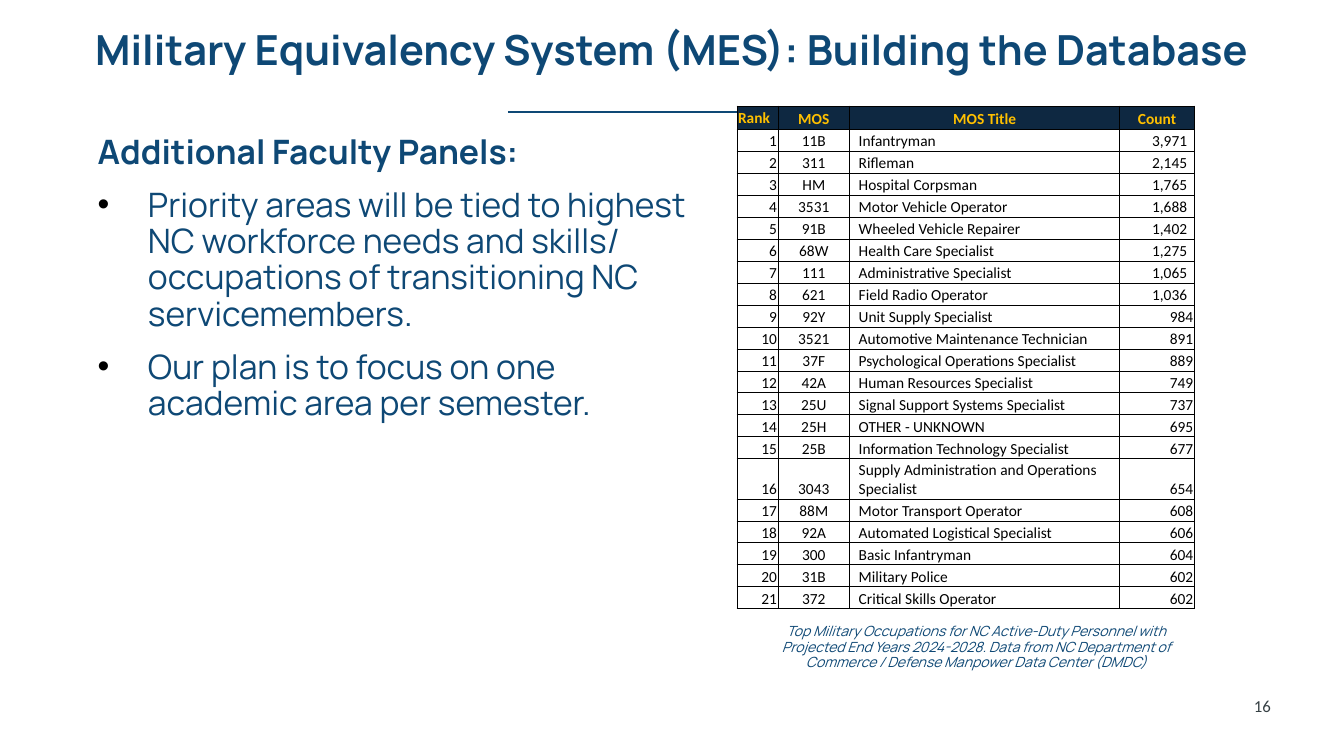
from dataclasses import dataclass

from lxml.etree import SubElement
from pptx import Presentation
from pptx.dml.color import RGBColor
from pptx.enum.shapes import MSO_CONNECTOR
from pptx.enum.text import MSO_ANCHOR, MSO_AUTO_SIZE, PP_ALIGN
from pptx.oxml.ns import qn
from pptx.util import Cm, Pt


@dataclass(frozen=True)
class Theme:
    blue: str = "0E4875"
    navy: str = "0E2841"
    gold: str = "FFC000"
    black: str = "000000"
    slate: str = "364044"
    display: str = "Manrope"
    plain: str = "Calibri"
    title_size: float = 29.6
    body_size: float = 24
    number_size: float = 12
    table_size: float = 11
    caption_size: float = 10
    line_spacing: float = 0.9


THEME = Theme()
LEFT, CENTER, RIGHT = PP_ALIGN.LEFT, PP_ALIGN.CENTER, PP_ALIGN.RIGHT

HEADINGS = ("Rank", "MOS", "MOS Title", "Count")
OCCUPATIONS = (
    ("11B", "Infantryman", 3971),
    ("311", "Rifleman", 2145),
    ("HM", "Hospital Corpsman", 1765),
    ("3531", "Motor Vehicle Operator", 1688),
    ("91B", "Wheeled Vehicle Repairer", 1402),
    ("68W", "Health Care Specialist", 1275),
    ("111", "Administrative Specialist", 1065),
    ("621", "Field Radio Operator", 1036),
    ("92Y", "Unit Supply Specialist", 984),
    ("3521", "Automotive Maintenance Technician", 891),
    ("37F", "Psychological Operations Specialist", 889),
    ("42A", "Human Resources Specialist", 749),
    ("25U", "Signal Support Systems Specialist", 737),
    ("25H", "OTHER - UNKNOWN", 695),
    ("25B", "Information Technology Specialist", 677),
    ("3043", "Supply Administration and Operations Specialist", 654),
    ("88M", "Motor Transport Operator", 608),
    ("92A", "Automated Logistical Specialist", 606),
    ("300", "Basic Infantryman", 604),
    ("31B", "Military Police", 602),
    ("372", "Critical Skills Operator", 602),
)
TALL_RANK = 16
COLUMN_WIDTHS = (1.04, 1.8, 6.81, 1.88)
HEADER_HEIGHT, TALL_HEIGHT, TABLE_HEIGHT = 0.58, 1.01, 12.67
ROW_HEIGHT = (TABLE_HEIGHT - HEADER_HEIGHT - TALL_HEIGHT) / (len(OCCUPATIONS) - 1)


def apply(target, values):
    for name, value in values.items():
        setattr(target, name, value)


class SlideBuilder:
    def __init__(self, page, theme):
        self.page = page
        self.theme = theme

    def fill_para(self, para, text, size, color, family, align=LEFT, spacing=None, after=0,
                  **style):
        apply(para, {"alignment": align, "line_spacing": spacing,
                     "space_before": Pt(0), "space_after": Pt(after)})
        span = para.add_run()
        span.text = text
        apply(span.font, {"size": Pt(size), "name": family, "bold": False, **style})
        span.font.color.rgb = RGBColor.from_string(color)

    def bullet(self, para):
        properties = para._p.get_or_add_pPr()
        properties.set("marL", str(Cm(1.27)))
        properties.set("indent", str(-Cm(1.27)))
        color = SubElement(properties, qn("a:buClr"))
        SubElement(color, qn("a:srgbClr"), val=self.theme.black)
        SubElement(properties, qn("a:buFont"), typeface="Arial")
        SubElement(properties, qn("a:buChar"), char="•")

    def title(self, text, left, top, width, height):
        theme = self.theme
        shape = self.page.shapes.title
        apply(shape, {"left": Cm(left), "top": Cm(top), "width": Cm(width), "height": Cm(height)})
        apply(shape.text_frame, {"word_wrap": True, "auto_size": MSO_AUTO_SIZE.NONE,
                                 "vertical_anchor": MSO_ANCHOR.TOP})
        self.fill_para(shape.text_frame.paragraphs[0], text, theme.title_size, theme.blue,
                       theme.display, CENTER, theme.line_spacing, bold=True)

    def text_frame(self, left, top, width, height, **values):
        box = self.page.shapes.add_textbox(Cm(left), Cm(top), Cm(width), Cm(height))
        apply(box.text_frame, {"word_wrap": True, **values})
        return box.text_frame

    def body(self, heading, points, *place):
        theme = self.theme
        frame = self.text_frame(*place)
        for index, text in enumerate((heading, *points)):
            para = frame.add_paragraph() if index else frame.paragraphs[0]
            if index:
                self.bullet(para)
            self.fill_para(para, text, theme.body_size, theme.blue, theme.display,
                           spacing=theme.line_spacing, after=12, bold=index == 0)

    def caption(self, text, *place):
        theme = self.theme
        self.fill_para(self.text_frame(*place).paragraphs[0], text, theme.caption_size,
                       theme.blue, theme.display, CENTER, theme.line_spacing, italic=True)

    def page_number(self, text, *place):
        theme = self.theme
        margins = {f"margin_{side}": 0 for side in ("left", "top", "right", "bottom")}
        self.fill_para(self.text_frame(*place, **margins).paragraphs[0], text,
                       theme.number_size, theme.slate, theme.plain, RIGHT)

    def rule(self, left, top, right):
        line = self.page.shapes.add_connector(
            MSO_CONNECTOR.STRAIGHT, Cm(left), Cm(top), Cm(right), Cm(top))
        line.line.color.rgb = RGBColor.from_string(self.theme.blue)
        line.line.width = Pt(2)
        SubElement(line._element.spPr, qn("a:effectLst"))

    def cell(self, cell, text, align, color, fill=None, bold=False,
             left=0.03, right=0.03, anchor=MSO_ANCHOR.BOTTOM):
        theme = self.theme
        apply(cell, {"margin_left": Cm(left), "margin_right": Cm(right), "margin_top": Cm(0.03),
                     "margin_bottom": 0, "vertical_anchor": anchor})
        properties = cell._tc.get_or_add_tcPr()
        for side in "LRTB":
            border = SubElement(properties, qn(f"a:ln{side}"), w=str(Pt(0.5)))
            SubElement(SubElement(border, qn("a:solidFill")), qn("a:srgbClr"), val=theme.black)
        if fill:
            cell.fill.solid()
            cell.fill.fore_color.rgb = RGBColor.from_string(fill)
        else:
            cell.fill.background()
        self.fill_para(cell.text_frame.paragraphs[0], text, theme.table_size, color,
                       theme.plain, align, bold=bold)

    def occupation_table(self, left, top):
        theme = self.theme
        table = self.page.shapes.add_table(
            len(OCCUPATIONS) + 1, len(HEADINGS), Cm(left), Cm(top),
            Cm(sum(COLUMN_WIDTHS)), Cm(TABLE_HEIGHT)).table
        table.horz_banding = False
        for column, width in zip(table.columns, COLUMN_WIDTHS):
            column.width = Cm(width)
        table.rows[0].height = Cm(HEADER_HEIGHT)
        for index, heading in enumerate(HEADINGS):
            self.cell(table.cell(0, index), heading, CENTER if index else LEFT, theme.gold,
                      theme.navy, True, anchor=MSO_ANCHOR.BOTTOM if index else MSO_ANCHOR.MIDDLE)
        for rank, (code, name, count) in enumerate(OCCUPATIONS, 1):
            table.rows[rank].height = Cm(TALL_HEIGHT if rank == TALL_RANK else ROW_HEIGHT)
            self.cell(table.cell(rank, 0), str(rank), RIGHT, theme.black)
            self.cell(table.cell(rank, 1), code, CENTER, theme.black)
            self.cell(table.cell(rank, 2), name, LEFT, theme.black, left=0.23)
            self.cell(table.cell(rank, 3), f"{count:,}", RIGHT, theme.black,
                      right=0.18 if count >= 1000 else 0.03)


def main():
    deck = Presentation()
    apply(deck, {"slide_width": Cm(33.87), "slide_height": Cm(19.05)})
    slide = SlideBuilder(deck.slides.add_slide(deck.slide_layouts[5]), THEME)
    slide.rule(12.8, 2.82, 21.06)
    slide.page_number("16", 30.48, 17.53, 1.55, 0.56)
    slide.title("Military Equivalency System (MES): Building the Database", 1.7, 0.61, 30.48, 2.06)
    slide.body(
        "Additional Faculty Panels:",
        ("Priority areas will be tied to highest NC workforce needs and skills/ "
         "occupations of transitioning NC servicemembers.",
         "Our plan is to focus on one academic area per semester."),
        2.21, 3.28, 15.57, 8.28)
    slide.occupation_table(18.57, 2.67)
    slide.caption(
        "Top Military Occupations for NC Active-Duty Personnel with Projected End Years "
        "2024-2028. Data from NC Department of Commerce / Defense Manpower Data Center (DMDC)",
        19.1, 15.62, 11, 1.55)
    deck.save("out.pptx")


if __name__ == "__main__":
    main()
